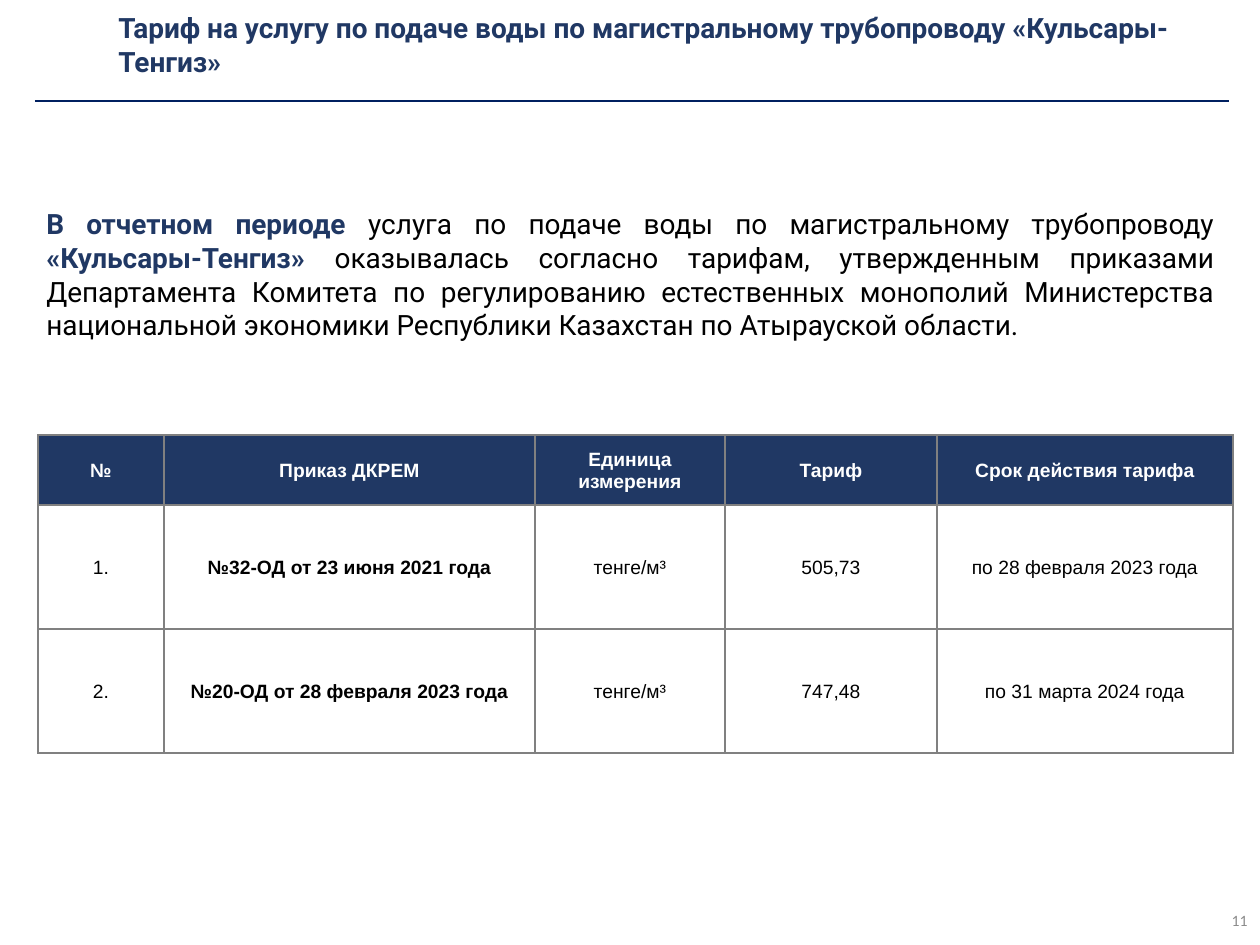
"""Build the slide on the water supply tariff of the Kulsary-Tengiz pipeline."""
import pptx
import pptx.dml.color
import pptx.enum.shapes
import pptx.enum.text
import pptx.oxml
import pptx.oxml.ns
import pptx.util

TITLE = "Тариф на услугу по подаче воды по магистральному трубопроводу «Кульсары-Тенгиз»"
STATEMENT = [
    ("В отчетном периоде ", True),
    ("услуга по подаче воды по магистральному трубопроводу ", False),
    ("«Кульсары-Тенгиз» ", True),
    ("оказывалась согласно тарифам, утвержденным приказами Департамента Комитета "
     "по регулированию естественных монополий Министерства национальной экономики "
     "Республики Казахстан по Атырауской области.", False),
]
TARIFFS = [
    ("№", "Приказ ДКРЕМ", "Единица измерения", "Тариф", "Срок действия тарифа"),
    ("1.", "№32-ОД от 23 июня 2021 года", "тенге/м³", "505,73", "по 28 февраля 2023 года"),
    ("2.", "№20-ОД от 28 февраля 2023 года", "тенге/м³", "747,48", "по 31 марта 2024 года"),
]
ORDER_COLUMN = 1
PAGE = "11"

SLIDE_SIZE = (1260, 945)
TITLE_BOX = (106, 18, 1125, 53)
RULE = (35, 101, 1229, 101)
STATEMENT_BOX = (34, 76, 1193, 396)
TABLE_ORIGIN = (38, 435)
COLUMN_WIDTHS = (126, 371, 190, 212, 296)
ROW_HEIGHTS = (70, 124, 124)
PAGE_BOX = (977, 895, 283, 50)

THEME = {
    "navy": "203864", "rule": "002060", "grid": "808080", "page": "8C8C8C",
    "black": "000000", "white": "FFFFFF",
    "text_font": "Roboto", "table_font": "Arial", "page_font": "Calibri",
    "text_size": 16, "table_size": 11, "page_size": 9, "line_width": 1,
}
ALIGN = pptx.enum.text.PP_ALIGN
MIDDLE = pptx.enum.text.MSO_ANCHOR.MIDDLE


def px(*lengths):
    return [pptx.util.Emu(round(length * 914400 / 126)) for length in lengths]


def color(name):
    return pptx.dml.color.RGBColor.from_string(THEME[name])


def style(run, role, ink, bold=False):
    run.font.name = THEME[role + "_font"]
    run.font.size = pptx.util.Pt(THEME[role + "_size"])
    run.font.bold = bold
    run.font.color.rgb = color(ink)


def add_text(slide, box, pieces, role, align):
    frame = slide.shapes.add_textbox(*px(*box)).text_frame
    frame.word_wrap = True
    frame.vertical_anchor = MIDDLE
    paragraph = frame.paragraphs[0]
    paragraph.alignment = align
    for words, ink, bold in pieces:
        run = paragraph.add_run()
        run.text = words
        style(run, role, ink, bold)


def add_rule(slide):
    rule = slide.shapes.add_connector(pptx.enum.shapes.MSO_CONNECTOR.STRAIGHT, *px(*RULE))
    rule.line.color.rgb = color("rule")
    rule.line.width = pptx.util.Pt(THEME["line_width"])
    rule._element.spPr.append(pptx.oxml.parse_xml(
        f"<a:effectLst {pptx.oxml.ns.nsdecls('a')}/>"))


def add_borders(cell):
    properties = cell._tc.get_or_add_tcPr()
    width = pptx.util.Pt(THEME["line_width"])
    for position, side in enumerate(("lnL", "lnR", "lnT", "lnB")):
        properties.insert(position, pptx.oxml.parse_xml(
            f'<a:{side} {pptx.oxml.ns.nsdecls("a")} w="{width}"><a:solidFill>'
            f'<a:srgbClr val="{THEME["grid"]}"/></a:solidFill></a:{side}>'))


def fill_cell(cell, words, header, bold):
    cell.text_frame.text = words
    cell.vertical_anchor = MIDDLE
    cell.margin_left = cell.margin_right = cell.margin_top = pptx.util.Inches(0.01)
    cell.margin_bottom = 0
    paragraph = cell.text_frame.paragraphs[0]
    paragraph.alignment = ALIGN.CENTER
    style(paragraph.runs[0], "table", "white" if header else "black", bold)
    if header:
        cell.fill.solid()
        cell.fill.fore_color.rgb = color("navy")
    else:
        cell.fill.background()
    add_borders(cell)


def add_tariffs(slide):
    extent = (sum(COLUMN_WIDTHS), sum(ROW_HEIGHTS))
    table = slide.shapes.add_table(
        len(TARIFFS), len(COLUMN_WIDTHS), *px(*TABLE_ORIGIN, *extent)).table
    for column, width in zip(table.columns, px(*COLUMN_WIDTHS)):
        column.width = width
    for row, height in zip(table.rows, px(*ROW_HEIGHTS)):
        row.height = height
    for r, entries in enumerate(TARIFFS):
        for c, words in enumerate(entries):
            header = r == 0
            fill_cell(table.cell(r, c), words, header, header or c == ORDER_COLUMN)


def main():
    deck = pptx.Presentation()
    deck.slide_width, deck.slide_height = px(*SLIDE_SIZE)
    slide = deck.slides.add_slide(deck.slide_layouts[6])
    add_text(slide, PAGE_BOX, [(PAGE, "page", False)], "page", ALIGN.RIGHT)
    add_text(slide, TITLE_BOX, [(TITLE, "navy", True)], "text", ALIGN.LEFT)
    add_rule(slide)
    statement = [(words, "navy" if key else "black", key) for words, key in STATEMENT]
    add_text(slide, STATEMENT_BOX, statement, "text", ALIGN.JUSTIFY)
    add_tariffs(slide)
    deck.save("out.pptx")


if __name__ == "__main__":
    main()
